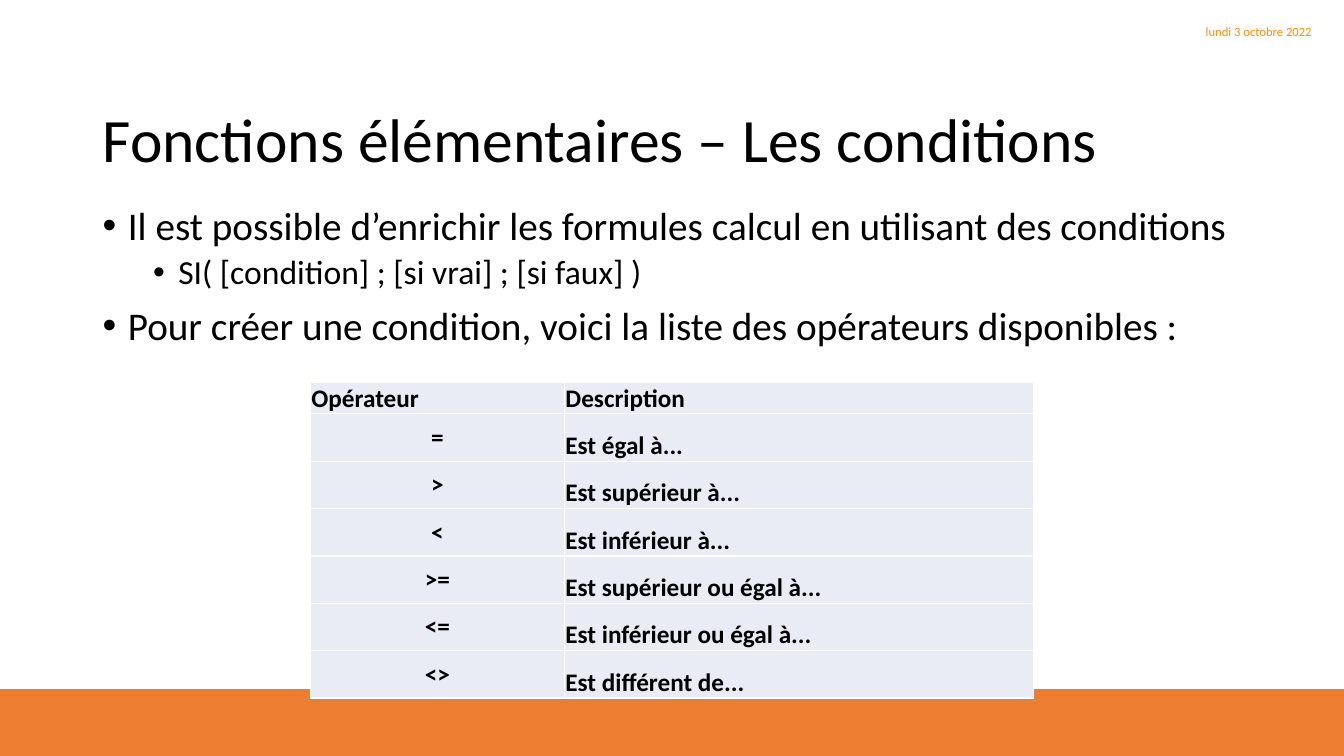
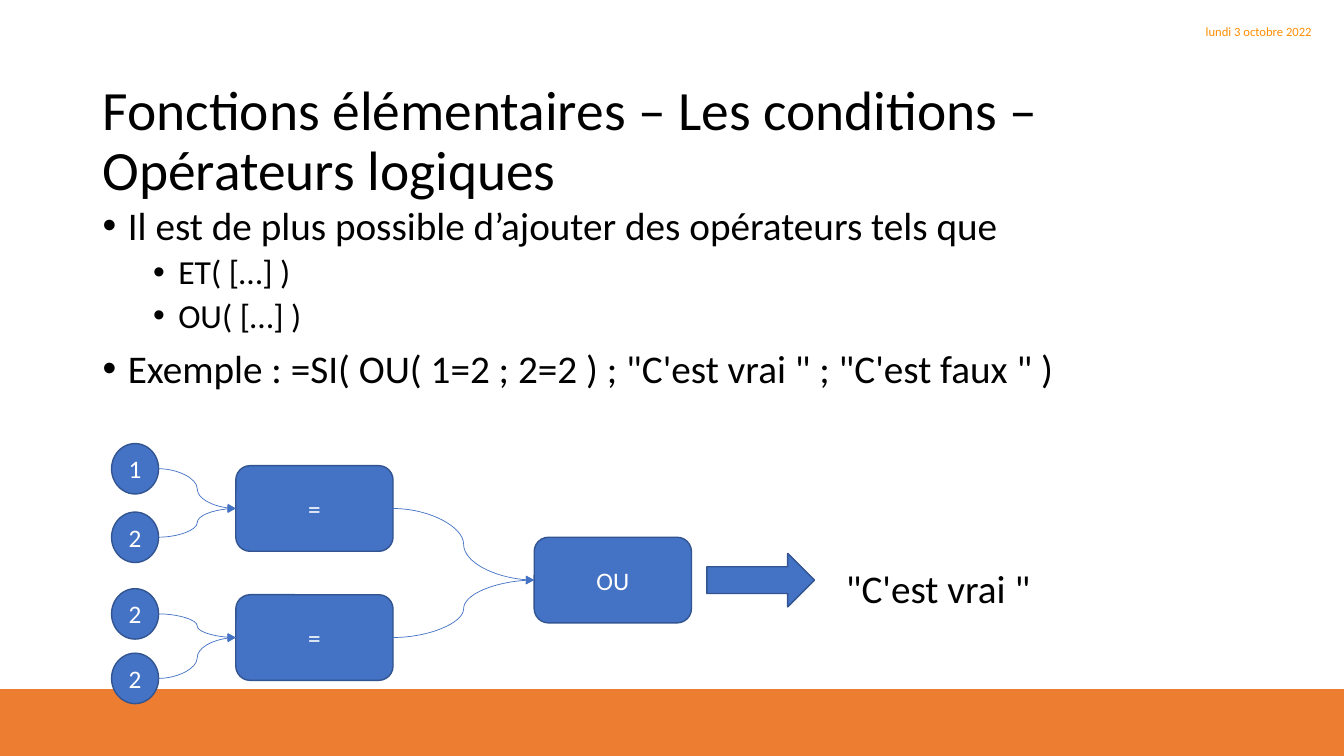
from dataclasses import dataclass

from lxml import etree
from pptx import Presentation
from pptx.dml.color import RGBColor
from pptx.enum.shapes import MSO_CONNECTOR, MSO_SHAPE
from pptx.enum.text import MSO_ANCHOR, PP_ALIGN
from pptx.oxml.ns import qn
from pptx.util import Emu, Inches, Pt

CURVE = MSO_CONNECTOR.CURVE
RECTANGLE, ROUNDED = MSO_SHAPE.RECTANGLE, MSO_SHAPE.ROUNDED_RECTANGLE
OVAL, RIGHT_ARROW = MSO_SHAPE.OVAL, MSO_SHAPE.RIGHT_ARROW
TOP, MIDDLE, BOTTOM = MSO_ANCHOR.TOP, MSO_ANCHOR.MIDDLE, MSO_ANCHOR.BOTTOM
LEFT, CENTER, RIGHT = PP_ALIGN.LEFT, PP_ALIGN.CENTER, PP_ALIGN.RIGHT

WIDTH, HEIGHT = Inches(13.333), Inches(7.5)
FONT = "Calibri"
COLORS = {
    "band": "ED7D31",
    "date": "FF8E01",
    "text": "000000",
    "light": "FFFFFF",
    "cell": "E9EBF5",
    "node": "4472C4",
    "outline": "325491",
}
OVAL_RIGHT, BOX_LEFT, BOX_RIGHT = 6, 1, 3


@dataclass(frozen=True)
class Area:
    """Percentages of the slide's width and height."""
    left: float
    top: float
    width: float
    height: float

    def emu(self) -> tuple:
        return across(self.left), down(self.top), across(self.width), down(self.height)


@dataclass(frozen=True)
class Level:
    size: float
    margin: float
    before: float


@dataclass(frozen=True)
class Bullet:
    text: str
    level: int = 0


@dataclass(frozen=True)
class Gate:
    label: str
    left: float
    top: float


BAND = Area(0, 91.2, 100, 8.8)
DATE = Area(84.75, 2.8, 13.58, 2.8)
TITLE = Area(6.9, 13.07, 86.25, 11.6)
BODY = Area(6.9, 26.67, 86.25, 63.47)
LEVELS = (Level(28, 0.25, 10), Level(24, 0.75, 5))

TABLE_LEFT, TABLE_TOP = 23.1, 50.53
COLUMNS = (18.9, 34.88)
HEADER_ROW, OPERATOR_ROW = 4.2, 6.27
OPERATORS = (
    ("Opérateur", "Description"),
    ("=", "Est égal à..."),
    (">", "Est supérieur à..."),
    ("<", "Est inférieur à..."),
    (">=", "Est supérieur ou égal à..."),
    ("<=", "Est inférieur ou égal à..."),
    ("<>", "Est différent de..."),
)

GATE_WIDTH, GATE_HEIGHT = 11.7, 11.33
VALUE_LEFT, VALUE_WIDTH, VALUE_HEIGHT = 8.3, 3.5, 6.67
EQUALITIES = (
    (Gate("=", 17.55, 61.6), (("1", 58.67), ("2", 67.73))),
    (Gate("=", 17.55, 78.67), (("2", 77.87), ("2", 86.4))),
)
OR_GATE = Gate("OU", 39.75, 71.07)
RESULT_ARROW = Area(52.6, 73.2, 8, 7.07)
RESULT = Area(62.2, 74, 15.4, 7.6)


def across(share: float) -> Emu:
    return Emu(round(WIDTH * share / 100))


def down(share: float) -> Emu:
    return Emu(round(HEIGHT * share / 100))


def color(name: str) -> RGBColor:
    return RGBColor.from_string(COLORS[name])


def add_bullet(para, margin: float) -> None:
    properties = para._p.get_or_add_pPr()
    properties.set("marL", str(Inches(margin)))
    properties.set("indent", str(Inches(-0.25)))
    etree.SubElement(properties, qn("a:buFont"), typeface="Arial")
    etree.SubElement(properties, qn("a:buChar"), char="•")


def write(para, text: str, *, size: float = 18, ink: str = "text", bold: bool = False,
          align=LEFT, spacing: float = 1, before: float = 0) -> None:
    para.alignment = align
    para.line_spacing = spacing
    para.space_before = Pt(before)
    span = para.add_run()
    span.text = text
    span.font.name = FONT
    span.font.size = Pt(size)
    span.font.bold = bold
    span.font.color.rgb = color(ink)


def add_text(page, area: Area, text: str, *, anchor=TOP, wrap: bool = True, **style) -> None:
    frame = page.shapes.add_textbox(*area.emu()).text_frame
    frame.word_wrap = wrap
    frame.vertical_anchor = anchor
    write(frame.paragraphs[0], text, **style)


def add_box(page, kind, area: Area, text: str = "", *, fill: str = "node",
            outline: str = "outline"):
    box = page.shapes.add_shape(kind, *area.emu())
    box.shadow.inherit = False
    box.fill.solid()
    box.fill.fore_color.rgb = color(fill)
    box.line.color.rgb = color(outline)
    box.line.width = Pt(1)
    if text:
        box.text_frame.vertical_anchor = MIDDLE
        write(box.text_frame.paragraphs[0], text, ink="light", align=CENTER)
    return box


def add_curve(page, source, source_site: int, target) -> None:
    curve = page.shapes.add_connector(
        CURVE, source.left + source.width, source.top + source.height // 2,
        target.left, target.top + target.height // 2)
    ends = curve._element.nvCxnSpPr.cNvCxnSpPr
    for tag, box, site in (("a:stCxn", source, source_site), ("a:endCxn", target, BOX_LEFT)):
        etree.SubElement(ends, qn(tag), id=str(box.shape_id), idx=str(site))
    curve.line.color.rgb = color("node")
    curve.line.width = Pt(0.5)
    etree.SubElement(curve.line._get_or_add_ln(), qn("a:tailEnd"), type="triangle")
    etree.SubElement(curve._element.spPr, qn("a:effectLst"))


def add_page(deck, title: str, title_size: float, bullets: tuple):
    page = deck.slides.add_slide(deck.slide_layouts[6])
    add_box(page, RECTANGLE, BAND, fill="band", outline="band")
    add_text(page, DATE, "lundi 3 octobre 2022", anchor=MIDDLE, size=9, ink="date", align=RIGHT)
    add_text(page, TITLE, title, anchor=MIDDLE, size=title_size, spacing=0.9)
    frame = page.shapes.add_textbox(*BODY.emu()).text_frame
    frame.word_wrap = True
    for index, bullet in enumerate(bullets):
        para = frame.add_paragraph() if index else frame.paragraphs[0]
        level = LEVELS[bullet.level]
        para.level = bullet.level
        add_bullet(para, level.margin)
        write(para, bullet.text, size=level.size, spacing=0.9,
              before=level.before if index else 0)
    return page


def format_cell(cell, text: str, is_operator: bool) -> None:
    cell.vertical_anchor = BOTTOM
    cell.margin_left = cell.margin_right = Inches(0.01)
    cell.margin_top = Inches(0.08 if is_operator else 0.01)
    cell.margin_bottom = Inches(0.08 if is_operator else 0)
    properties = cell._tc.get_or_add_tcPr()
    for side in ("a:lnL", "a:lnR", "a:lnT", "a:lnB"):
        border = etree.SubElement(properties, qn(side), w=str(Pt(1)))
        paint = etree.SubElement(border, qn("a:solidFill"))
        etree.SubElement(paint, qn("a:srgbClr"), val=COLORS["light"])
    cell.fill.solid()
    cell.fill.fore_color.rgb = color("cell")
    write(cell.text_frame.paragraphs[0], text, bold=True,
          align=CENTER if is_operator else LEFT)


def add_operator_table(page) -> None:
    heights = [HEADER_ROW] + [OPERATOR_ROW] * (len(OPERATORS) - 1)
    area = Area(TABLE_LEFT, TABLE_TOP, sum(COLUMNS), sum(heights))
    table = page.shapes.add_table(len(OPERATORS), len(COLUMNS), *area.emu()).table
    table.first_row = table.horz_banding = False
    for column, width in zip(table.columns, COLUMNS):
        column.width = across(width)
    for row_index, (height, texts) in enumerate(zip(heights, OPERATORS)):
        table.rows[row_index].height = down(height)
        for column_index, text in enumerate(texts):
            format_cell(table.cell(row_index, column_index), text,
                        row_index > 0 and column_index == 0)


def add_gate(page, gate: Gate):
    return add_box(page, ROUNDED, Area(gate.left, gate.top, GATE_WIDTH, GATE_HEIGHT), gate.label)


def add_logic_diagram(page) -> None:
    or_box = add_gate(page, OR_GATE)
    for gate, values in EQUALITIES:
        gate_box = add_gate(page, gate)
        for label, top in values:
            area = Area(VALUE_LEFT, top, VALUE_WIDTH, VALUE_HEIGHT)
            add_curve(page, add_box(page, OVAL, area, label), OVAL_RIGHT, gate_box)
        add_curve(page, gate_box, BOX_RIGHT, or_box)
    add_box(page, RIGHT_ARROW, RESULT_ARROW)
    add_text(page, RESULT, "\"C'est vrai \"", wrap=False, size=28)


def main() -> None:
    deck = Presentation()
    deck.slide_width, deck.slide_height = WIDTH, HEIGHT
    conditions = add_page(deck, "Fonctions élémentaires – Les conditions", 44, (
        Bullet("Il est possible d’enrichir les formules calcul en utilisant des conditions"),
        Bullet("SI( [condition] ; [si vrai] ; [si faux] )", 1),
        Bullet("Pour créer une condition, voici la liste des opérateurs disponibles :"),
    ))
    add_operator_table(conditions)
    logic = add_page(deck, "Fonctions élémentaires – Les conditions – Opérateurs logiques", 39.6, (
        Bullet("Il est de plus possible d’ajouter des opérateurs tels que"),
        Bullet("ET( […] )", 1),
        Bullet("OU( […] )", 1),
        Bullet("Exemple : =SI( OU( 1=2 ; 2=2 ) ; \"C'est vrai \" ; \"C'est faux \" )"),
    ))
    add_logic_diagram(logic)
    deck.save("out.pptx")


if __name__ == "__main__":
    main()
